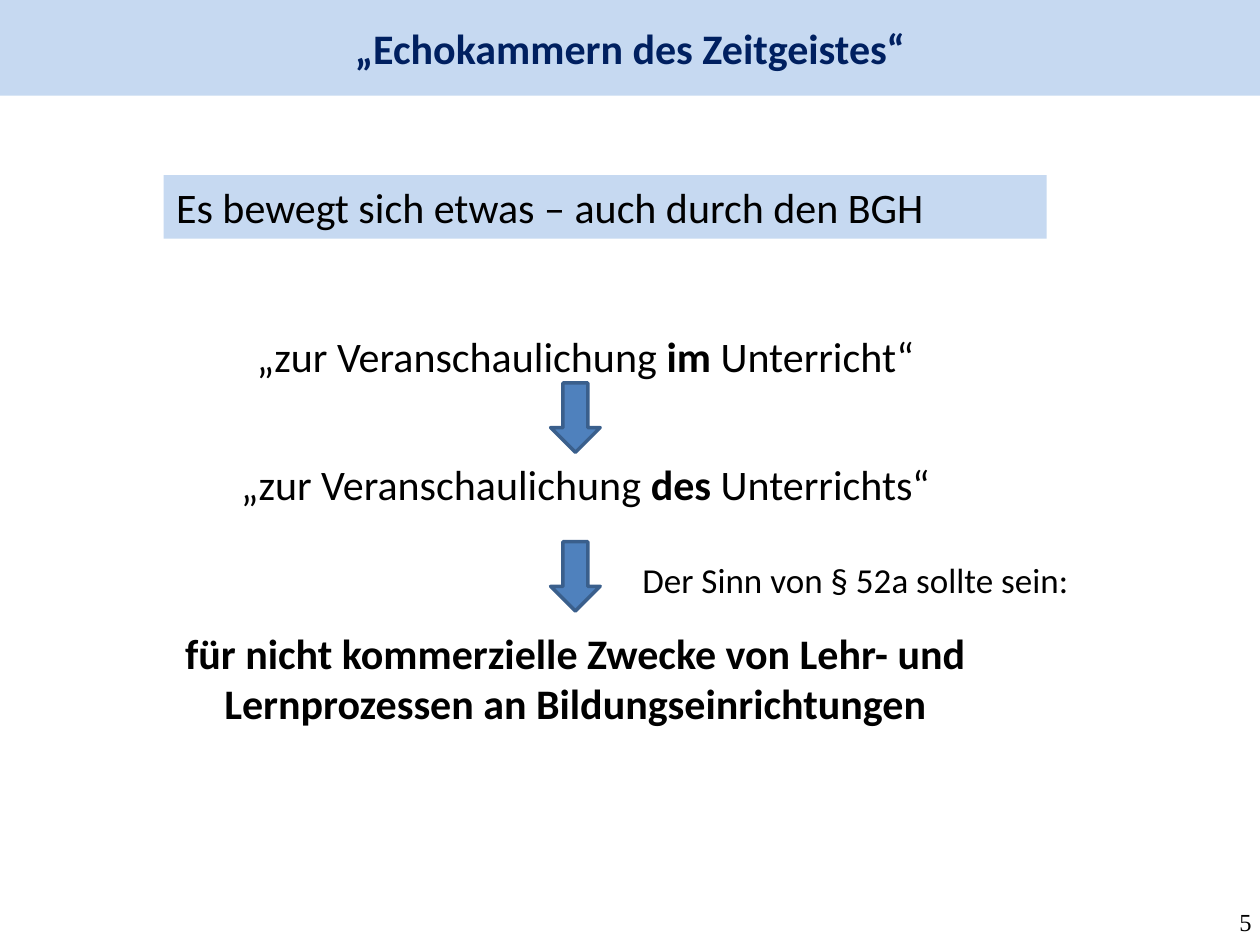
from dataclasses import dataclass

from pptx import Presentation
from pptx.dml.color import RGBColor
from pptx.enum.shapes import MSO_SHAPE
from pptx.enum.text import MSO_ANCHOR, PP_ALIGN
from pptx.util import Cm, Pt

RECT, DOWN_ARROW = MSO_SHAPE.RECTANGLE, MSO_SHAPE.DOWN_ARROW
LEFT, CENTER, RIGHT = PP_ALIGN.LEFT, PP_ALIGN.CENTER, PP_ALIGN.RIGHT
TOP, MIDDLE, BOTTOM = MSO_ANCHOR.TOP, MSO_ANCHOR.MIDDLE, MSO_ANCHOR.BOTTOM
SLIDE_W, SLIDE_H = 25.4, 19.05
BLACK, NAVY, PALE = "000000", "002060", "C6D9F1"
ARROW_FILL, ARROW_LINE = "4F81BD", "3A5F8C"


@dataclass
class Label:
    """Text in a box; runs pair wording with boldness, lengths in cm."""
    left: float
    top: float
    width: float
    height: float
    runs: list[tuple[str, bool]]
    align: PP_ALIGN = CENTER
    anchor: MSO_ANCHOR = TOP
    size: int = 24
    color: str = BLACK
    font: str = "Calibri"
    fill: str | None = None
    margins: tuple[float, float, float, float] = (0.25, 0.13, 0.25, 0.13)


def rgb(value: str) -> RGBColor:
    """Turn a hex string into a colour."""
    return RGBColor.from_string(value)


def add_label(s, label: Label) -> None:
    """Draw a label as a text box, or as a rectangle when it is filled."""
    box = [Cm(v) for v in (label.left, label.top, label.width, label.height)]
    if label.fill:
        sp = s.shapes.add_shape(RECT, *box)
        sp.shadow.inherit = False
        sp.fill.solid()
        sp.fill.fore_color.rgb = rgb(label.fill)
        sp.line.fill.background()
    else:
        sp = s.shapes.add_textbox(*box)
    tf = sp.text_frame
    tf.word_wrap = True
    tf.vertical_anchor = label.anchor
    tf.margin_left, tf.margin_top, tf.margin_right, tf.margin_bottom = (
        Cm(v) for v in label.margins)
    p = tf.paragraphs[0]
    p.alignment = label.align
    for text, bold in label.runs:
        r = p.add_run()
        r.text = text
        r.font.name = label.font
        r.font.size = Pt(label.size)
        r.font.bold = bold
        r.font.color.rgb = rgb(label.color)


def add_down_arrow(s, top: float) -> None:
    """Draw a block arrow leading from one wording to the next."""
    sp = s.shapes.add_shape(DOWN_ARROW, Cm(11.1), Cm(top), Cm(1), Cm(1.4))
    sp.shadow.inherit = False
    sp.fill.solid()
    sp.fill.fore_color.rgb = rgb(ARROW_FILL)
    sp.line.color.rgb = rgb(ARROW_LINE)
    sp.line.width = Pt(2)


def wording(top: float, stressed: str, ending: str) -> Label:
    """Describe one version of the statutory wording."""
    runs = [("„zur Veranschaulichung ", False), (stressed, True), (ending, False)]
    return Label(2.9, top, 17.8, 1.28, runs)


LABELS = [
    Label(23.5, 17.73, 1.73, 1.32, [("5", False)], RIGHT, BOTTOM, 14,
          font="Times New Roman", margins=(0, 0, 0, 0.18)),
    Label(0, 0, SLIDE_W, 1.93, [("„Echokammern des Zeitgeistes“", True)],
          anchor=MIDDLE, color=NAVY, fill=PALE),
    Label(3.3, 3.53, 17.8, 1.28,
          [("Es bewegt sich etwas – auch durch den BGH", False)], LEFT, fill=PALE),
    wording(6.53, "im", " Unterricht“"),
    wording(9.12, "des", " Unterrichts“"),
    Label(2.7, 12.52, 17.8, 2.31,
          [("für nicht kommerzielle Zwecke von Lehr- und Lernprozessen "
            "an Bildungseinrichtungen", True)]),
    Label(12.7, 11.13, 11, 1.11, [("Der Sinn von § 52a sollte sein:", False)],
          LEFT, size=20),
]


def main() -> None:
    """Build and save the slide."""
    prs = Presentation()
    prs.slide_width, prs.slide_height = Cm(SLIDE_W), Cm(SLIDE_H)
    s = prs.slides.add_slide(prs.slide_layouts[6])
    for label in LABELS:
        add_label(s, label)
    for top in (7.72, 10.92):
        add_down_arrow(s, top)
    prs.save("out.pptx")


if __name__ == "__main__":
    main()
